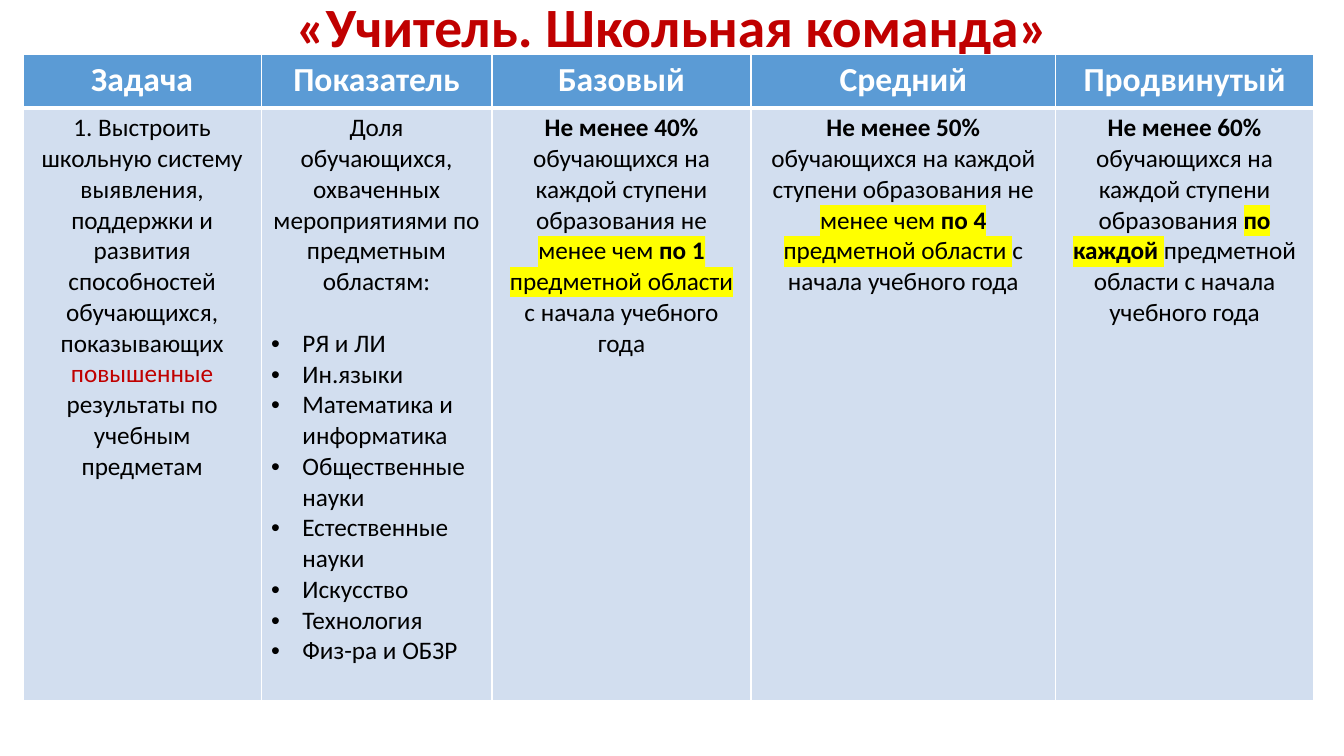
from lxml import etree
from pptx import Presentation
from pptx.dml.color import RGBColor
from pptx.enum import text
from pptx.oxml import ns
from pptx.util import Inches, Pt

COLORS = {"title": "C00000", "header": "5B9BD5", "body": "D2DEEF",
          "white": "FFFFFF", "black": "000000", "mark": "FFFF00"}


def add_run(p, words, size=18, color="black", bold=False, mark=False):
    r = p.add_run()
    r.text = words
    r.font.size = Pt(size)
    r.font.bold = bold
    r.font.color.rgb = RGBColor.from_string(COLORS[color])
    r.font.name = "Calibri"
    if mark:
        hl = etree.Element(ns.qn("a:highlight"))
        etree.SubElement(hl, ns.qn("a:srgbClr"), val=COLORS["mark"])
        r.font._element.find(ns.qn("a:latin")).addprevious(hl)


def style_cell(cell, fill, top, bottom):
    tc_pr = cell._tc.get_or_add_tcPr()
    for side, width in (("L", 1), ("R", 1), ("T", top), ("B", bottom)):
        ln = etree.SubElement(tc_pr, ns.qn(f"a:ln{side}"), w=str(Pt(width)))
        solid = etree.SubElement(ln, ns.qn("a:solidFill"))
        etree.SubElement(solid, ns.qn("a:srgbClr"), val=COLORS["white"])
    cell.fill.solid()
    cell.fill.fore_color.rgb = RGBColor.from_string(COLORS[fill])


prs = Presentation()
prs.slide_width, prs.slide_height = Inches(13.33), Inches(7.5)
s = prs.slides.add_slide(prs.slide_layouts[5])

title = s.shapes.title
title.left, title.top = Inches(0.92), Inches(0.07)
title.width, title.height = Inches(11.5), Inches(0.45)
tf = title.text_frame
tf.auto_size = text.MSO_AUTO_SIZE.NONE
tf.vertical_anchor = text.MSO_ANCHOR.MIDDLE
p = tf.paragraphs[0]
p.alignment = text.PP_ALIGN.CENTER
p.line_spacing = 0.9
add_run(p, "«Учитель. Школьная команда»", size=39.6, color="title", bold=True)

bold, mark = {"bold": True}, {"mark": True}
both = {"bold": True, "mark": True}
stage = "обучающихся на каждой ступени образования "
columns = [
    ("Задача", 2.36, [
        ("1. Выстроить школьную систему выявления, поддержки и развития "
         "способностей обучающихся, показывающих ", {}),
        ("повышенные", {"color": "title"}),
        (" результаты по учебным предметам", {})]),
    ("Показатель", 2.29, [
        ("Доля обучающихся, охваченных мероприятиями по предметным областям:", {})]),
    ("Базовый", 2.57, [
        ("Не менее 40% ", bold), (stage + "не ", {}), ("менее чем ", mark),
        ("по 1", both), (" предметной области ", mark),
        ("с начала учебного года", {})]),
    ("Средний", 3.02, [
        ("Не менее 50% ", bold), (stage + "не ", {}), ("менее чем ", mark),
        ("по 4 ", both), ("предметной области ", mark),
        ("с начала учебного года", {})]),
    ("Продвинутый", 2.56, [
        ("Не менее 60% ", bold), (stage, {}), ("по каждой ", both),
        ("предметной области с начала учебного года", {})]),
]
subjects = ["РЯ и ЛИ", "Ин.языки", "Математика и информатика",
            "Общественные науки", "Естественные науки", "Искусство",
            "Технология", "Физ-ра и ОБЗР"]

table = s.shapes.add_table(2, len(columns), Inches(0.23), Inches(0.54),
                           Inches(12.8), Inches(6.41)).table
table.rows[0].height, table.rows[1].height = Inches(0.53), Inches(5.88)
for i, (heading, width, runs) in enumerate(columns):
    table.columns[i].width = Inches(width)
    head, body = table.cell(0, i), table.cell(1, i)
    style_cell(head, "header", 1, 3)
    style_cell(body, "body", 3, 1)
    p = head.text_frame.paragraphs[0]
    p.alignment = text.PP_ALIGN.CENTER
    add_run(p, heading, size=24, color="white", bold=True)
    p = body.text_frame.paragraphs[0]
    p.alignment = text.PP_ALIGN.CENTER
    for words, fmt in runs:
        add_run(p, words, **fmt)

tf = table.cell(1, 1).text_frame
for i, subject in enumerate(subjects):
    p = tf.add_paragraph()
    if i == 0:
        p.space_before = Pt(22)
    p_pr = p._p.get_or_add_pPr()
    p_pr.set("marL", str(Inches(0.31)))
    p_pr.set("indent", str(-Inches(0.31)))
    etree.SubElement(p_pr, ns.qn("a:buFont"), typeface="Arial")
    etree.SubElement(p_pr, ns.qn("a:buChar"), char="•")
    add_run(p, subject)

prs.save("out.pptx")
